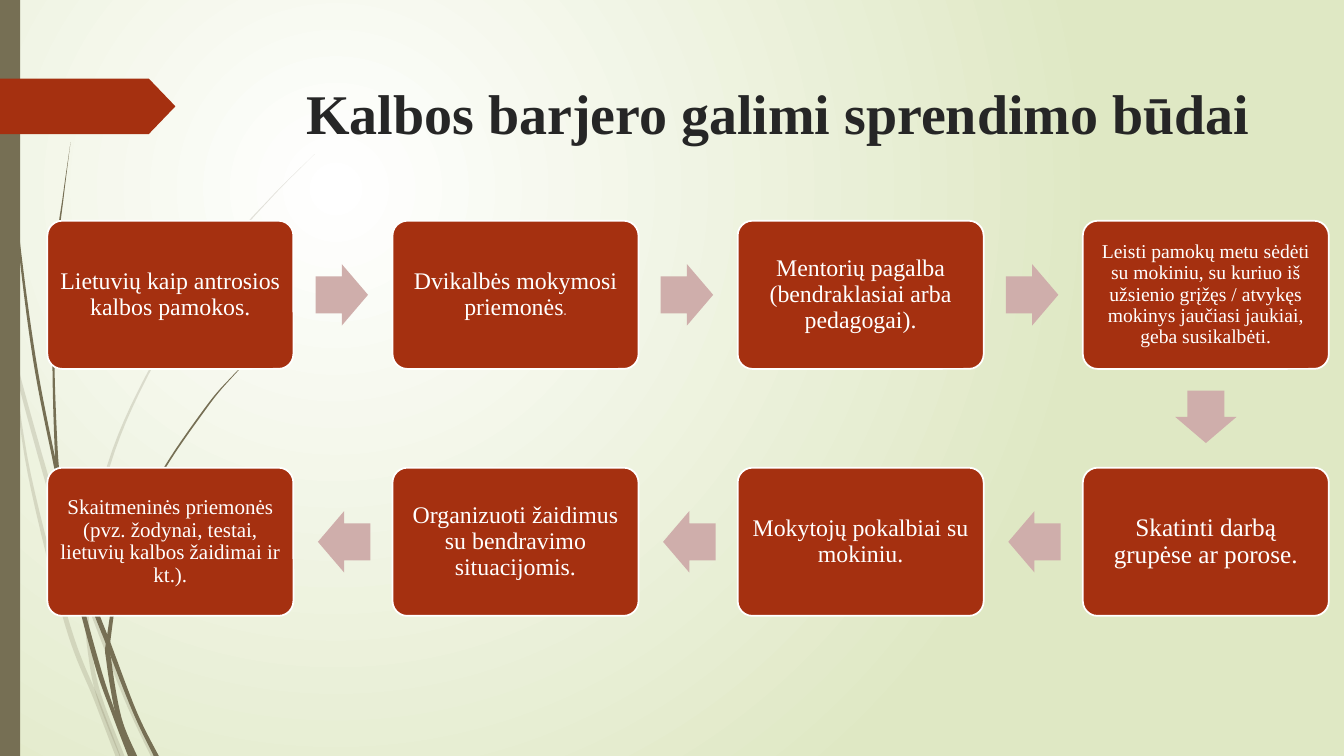
from pptx import Presentation
from pptx import util as u
from pptx.dml.color import RGBColor
from pptx.enum import shapes, text
from pptx.oxml import parse_xml
from pptx.oxml.ns import nsdecls, qn
from lxml import etree

EMU_PER_PX = 9144
SLIDE_W, SLIDE_H = 1333, 750

WHITE = RGBColor(0xFF, 0xFF, 0xFF)
MEADOW = RGBColor(0xDF, 0xE8, 0xC4)
OLIVE = RGBColor(0x76, 0x6F, 0x54)
RUST = RGBColor(0xA5, 0x30, 0x10)
ROSE = RGBColor(0xCF, 0xAE, 0xAB)
INK = RGBColor(0x26, 0x26, 0x26)
SERIF = "Times New Roman"

TITLE = "Kalbos barjero galimi sprendimo būdai"

# Steps in reading order: text runs (text, size, font) and inner margin
STEPS = [
    ([("Lietuvių kaip antrosios kalbos pamokos.", 17, SERIF)], 7),
    ([("Dvikalbės mokymosi priemonės", 17, SERIF), (".", 12, "Quicksand")], 7),
    ([("Mentorių pagalba (bendraklasiai arba pedagogai).", 17, SERIF)], 7),
    ([("Leisti pamokų metu sėdėti su mokiniu, su kuriuo iš užsienio grįžęs / "
       "atvykęs mokinys jaučiasi jaukiai, geba susikalbėti.", 14, SERIF)], 6),
    ([("Skatinti darbą grupėse ar porose.", 18, SERIF)], 7),
    ([("Mokytojų pokalbiai su mokiniu.", 17, SERIF)], 7),
    ([("Organizuoti žaidimus su bendravimo situacijomis.", 17, SERIF)], 7),
    ([("Skaitmeninės priemonės (pvz. žodynai, testai, lietuvių kalbos "
       "žaidimai ir kt.).", 15, SERIF)], 6),
]

# Grass blades: (x, y, width) along the middle of each blade
PALE_BLADES = [
    [(0, 290, 3), (19, 376, 4), (60, 521, 5), (86, 593, 4), (125, 693, 4), (152, 750, 5)],
    [(12, 352, 1), (29, 470, 3), (67, 620, 5), (96, 695, 5), (117, 750, 5)],
    [(312, 153, 0), (268, 197, 1), (228, 244, 2), (159, 348, 2), (108, 461, 3),
     (86, 584, 3), (86, 610, 4), (89, 646, 4), (98, 690, 5), (121, 750, 5)],
]
DARK_BLADES = [
    [(4, 0, 1), (7, 110, 1), (18, 233, 2), (34, 355, 3), (53, 453, 3),
     (62, 489, 4), (90, 591, 5), (108, 640, 5), (134, 707, 4), (155, 750, 5)],
    [(58, 480, 2), (70, 557, 4), (96, 658, 5), (113, 708, 4), (129, 750, 4)],
    [(260, 344, 0), (231, 373, 1), (204, 405, 2), (157, 475, 2), (123, 551, 3),
     (108, 632, 4), (108, 656, 5), (118, 712, 5), (133, 750, 6)],
    [(70, 141, 0), (63, 193, 1), (57, 245, 2), (53, 349, 2), (56, 451, 3), (59, 472, 3)],
]

COLUMNS = 4
GRID_X, GRID_Y = 47, 219
BOX_W, BOX_H = 244, 147
PITCH_X, PITCH_Y = 342.33, 245
ARROW_W, ARROW_H = 52, 61
CURVE_STEPS = 8


def px(n):
    return u.Emu(round(n * EMU_PER_PX))


def style(sp, fill, line=None):
    sp.shadow.inherit = False
    sp.fill.solid()
    sp.fill.fore_color.rgb = fill
    if line is None:
        sp.line.fill.background()
    else:
        sp.line.color.rgb = line
        sp.line.width = u.Pt(1.25)
    return sp


def add_preset(s, kind, x, y, w, h, fill, line=None):
    return style(s.shapes.add_shape(kind, px(x), px(y), px(w), px(h)), fill, line)


def smooth(knots):
    """Catmull-Rom points through the knots."""
    padded = [knots[0], *knots, knots[-1]]
    points = []
    for a, b, c, d in zip(padded, padded[1:], padded[2:], padded[3:]):
        for i in range(CURVE_STEPS):
            t = i / CURVE_STEPS
            points.append(tuple(
                q + 0.5 * t * (r - p + t * (2 * p - 5 * q + 4 * r - v
                                            + t * (3 * (q - r) + v - p)))
                for p, q, r, v in zip(a, b, c, d)))
    return points + [knots[-1]]


def add_blade(s, knots, alpha=None):
    points = smooth(knots)
    left = [(px(x - w / 2), px(y)) for x, y, w in points]
    right = [(px(x + w / 2), px(y)) for x, y, w in points]
    outline = left + right[::-1]
    builder = s.shapes.build_freeform(*outline[0])
    builder.add_line_segments(outline[1:], close=True)
    sp = style(builder.convert_to_shape(), OLIVE)
    if alpha:
        color = sp.element.spPr.find(qn("a:solidFill"))[0]
        etree.SubElement(color, qn("a:alpha")).set("val", str(alpha * 1000))


def paint_background(s):
    fill = s.background.fill
    fill.gradient()
    for stop, color, position in zip(fill.gradient_stops, (WHITE, MEADOW), (0, 1)):
        stop.color.rgb = color
        stop.position = position
    lin = s.element.find(".//" + qn("a:lin"))
    lin.getparent().replace(lin, parse_xml(
        f'<a:path {nsdecls("a")} path="circle">'
        '<a:fillToRect l="50000" t="50000" r="100000" b="100000"/></a:path>'))


def add_title(s):
    tf = s.shapes.add_textbox(px(284), px(68), px(975), px(140)).text_frame
    tf.word_wrap = True
    tf.margin_top = px(10)
    p = tf.paragraphs[0]
    p.text = TITLE
    p.alignment = text.PP_ALIGN.CENTER
    p.font.name, p.font.size, p.font.bold = SERIF, u.Pt(40), True
    p.font.color.rgb = INK


def add_step(s, x, y, runs, margin):
    sp = add_preset(s, shapes.MSO_SHAPE.ROUNDED_RECTANGLE, x, y, BOX_W, BOX_H, RUST, WHITE)
    sp.adjustments[0] = 0.1
    tf = sp.text_frame
    tf.word_wrap = True
    tf.vertical_anchor = text.MSO_ANCHOR.MIDDLE
    tf.margin_left = tf.margin_right = tf.margin_top = tf.margin_bottom = px(margin)
    p = tf.paragraphs[0]
    p.alignment = text.PP_ALIGN.CENTER
    p.line_spacing = 0.9
    for words, size, font in runs:
        r = p.add_run()
        r.text = words
        r.font.name, r.font.size = font, u.Pt(size)
        r.font.color.rgb = WHITE


def add_arrow(s, x, y, angle):
    sp = add_preset(s, shapes.MSO_SHAPE.RIGHT_ARROW, x, y, ARROW_W, ARROW_H, ROSE)
    sp.adjustments[0], sp.adjustments[1] = 0.6, 0.5
    sp.rotation = angle


def step_position(i):
    """Top left of step i: first row runs rightwards, second row back."""
    row, col = divmod(i, COLUMNS)
    if row:
        col = COLUMNS - 1 - col
    return GRID_X + col * PITCH_X, GRID_Y + row * PITCH_Y


def add_flow(s):
    for i, (runs, margin) in enumerate(STEPS):
        x, y = step_position(i)
        add_step(s, x, y, runs, margin)
        middle = y + (BOX_H - ARROW_H) / 2
        if i < COLUMNS - 1:
            add_arrow(s, x + 266, middle, 0)
        elif i == COLUMNS - 1:
            add_arrow(s, x + (BOX_W - ARROW_W) / 2, y + 164, 90)
        elif i < len(STEPS) - 1:
            add_arrow(s, x - 74, middle, 180)


def main():
    prs = Presentation()
    prs.slide_width, prs.slide_height = px(SLIDE_W), px(SLIDE_H)
    s = prs.slides.add_slide(prs.slide_layouts[6])
    paint_background(s)
    for knots in PALE_BLADES:
        add_blade(s, knots, alpha=20)
    for knots in DARK_BLADES:
        add_blade(s, knots)
    add_preset(s, shapes.MSO_SHAPE.RECTANGLE, 0, 0, 20, SLIDE_H, OLIVE)
    banner = add_preset(s, shapes.MSO_SHAPE.PENTAGON, 0, 78, 174, 55, RUST)
    banner.adjustments[0] = 0.48
    add_title(s)
    add_flow(s)
    prs.save("out.pptx")


if __name__ == "__main__":
    main()
